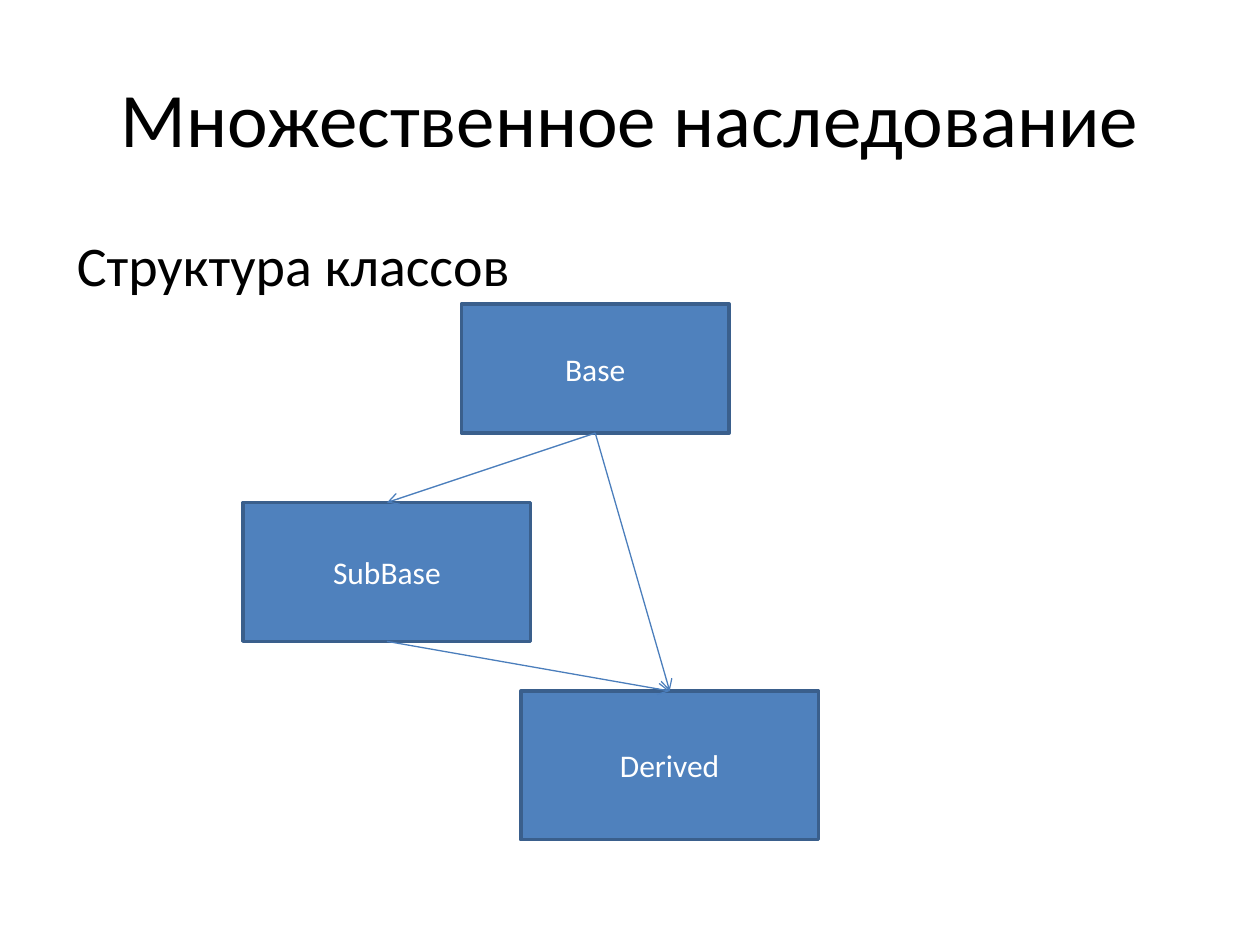
from pptx import Presentation
from pptx.dml.color import RGBColor
from pptx.enum.shapes import MSO_CONNECTOR, MSO_SHAPE
from pptx.enum.text import MSO_ANCHOR, PP_ALIGN
from pptx.oxml.ns import qn
from pptx.util import Cm, Pt
from lxml.etree import SubElement

COLORS = {"text": "000000", "label": "FFFFFF", "fill": "4F81BD",
          "edge": "3A5F8C", "arrow": "4B7EBC"}
FONT = "Calibri"

# text, (left, top, width, height) in cm, size, alignment, anchor
TEXTS = [
    ("Множественное наследование", (1.27, 0.76, 22.86, 3.18), 44,
     PP_ALIGN.CENTER, MSO_ANCHOR.MIDDLE),
    ("Структура классов", (1.3, 4.52, 22.86, 12.57), 32,
     PP_ALIGN.LEFT, MSO_ANCHOR.TOP),
]
CLASSES = {
    "Base": (9.3, 6.13, 5.4, 2.6),
    "SubBase": (4.9, 10.13, 5.8, 2.8),
    "Derived": (10.5, 13.93, 6, 3),
}
ARROWS = [("Base", "SubBase"), ("SubBase", "Derived"), ("Base", "Derived")]
TOP, BOTTOM = 0, 2  # connection sites of a rectangle


def color(name):
    return RGBColor.from_string(COLORS[name])


def write(shape, text, size, tint, align, anchor):
    frame = shape.text_frame
    frame.word_wrap = True
    frame.vertical_anchor = anchor
    para = frame.paragraphs[0]
    para.text = text
    para.alignment = align
    para.font.name = FONT
    para.font.size = Pt(size)
    para.font.color.rgb = color(tint)


def add_class(slide, name, place):
    box = slide.shapes.add_shape(MSO_SHAPE.RECTANGLE, *map(Cm, place))
    box.shadow.inherit = False
    box.fill.solid()
    box.fill.fore_color.rgb = color("fill")
    box.line.color.rgb = color("edge")
    box.line.width = Pt(2)
    write(box, name, 18, "label", PP_ALIGN.CENTER, MSO_ANCHOR.MIDDLE)
    return box


def add_arrow(slide, start, end):
    """Link the bottom of one box to the top of another."""
    link = slide.shapes.add_connector(MSO_CONNECTOR.STRAIGHT, 0, 0, 0, 0)
    link.begin_connect(start, BOTTOM)
    link.end_connect(end, TOP)
    link.line.color.rgb = color("arrow")
    link.line.width = Pt(0.75)
    SubElement(link.line._get_or_add_ln(), qn("a:tailEnd"), type="arrow")
    SubElement(link._element.spPr, qn("a:effectLst"))


def main():
    deck = Presentation()
    deck.slide_width, deck.slide_height = Cm(25.4), Cm(19.05)
    slide = deck.slides.add_slide(deck.slide_layouts[6])
    for text, place, size, align, anchor in TEXTS:
        box = slide.shapes.add_textbox(*map(Cm, place))
        write(box, text, size, "text", align, anchor)
    boxes = {name: add_class(slide, name, place)
             for name, place in CLASSES.items()}
    for start, end in ARROWS:
        add_arrow(slide, boxes[start], boxes[end])
    deck.save("out.pptx")


if __name__ == "__main__":
    main()
